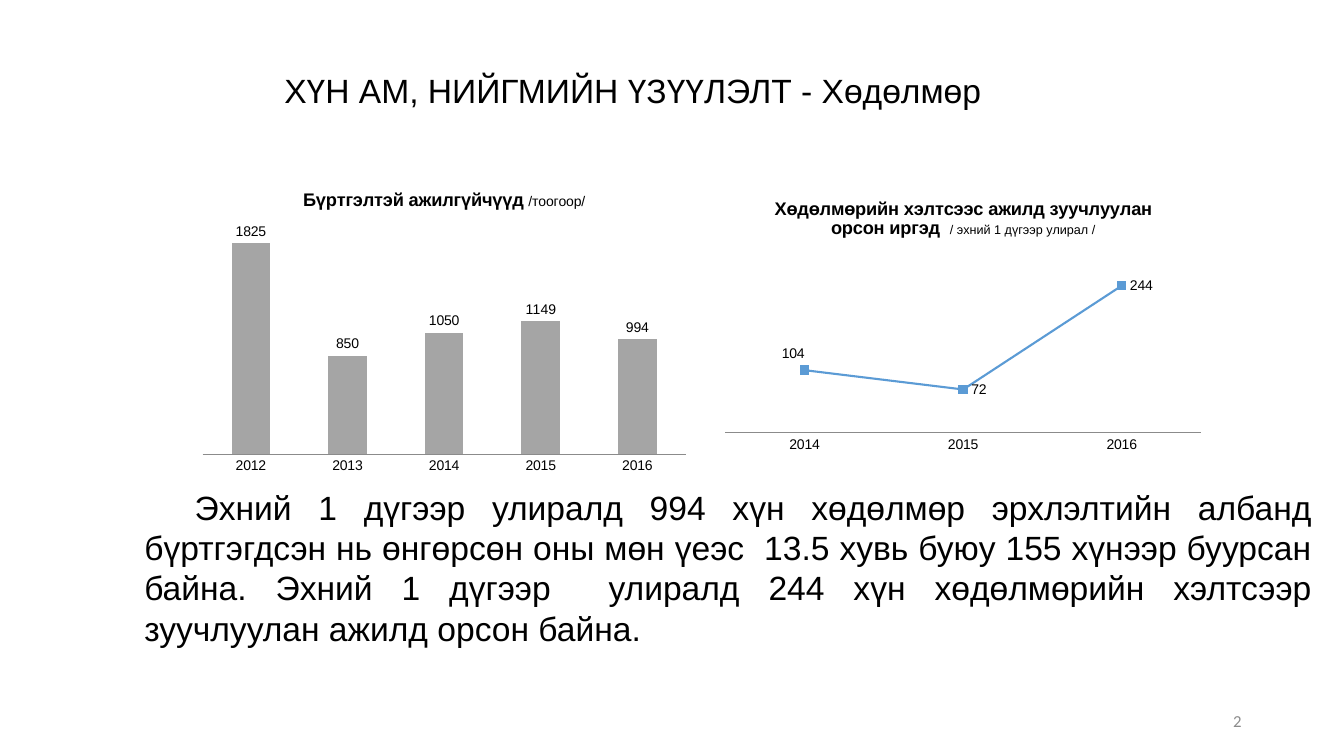
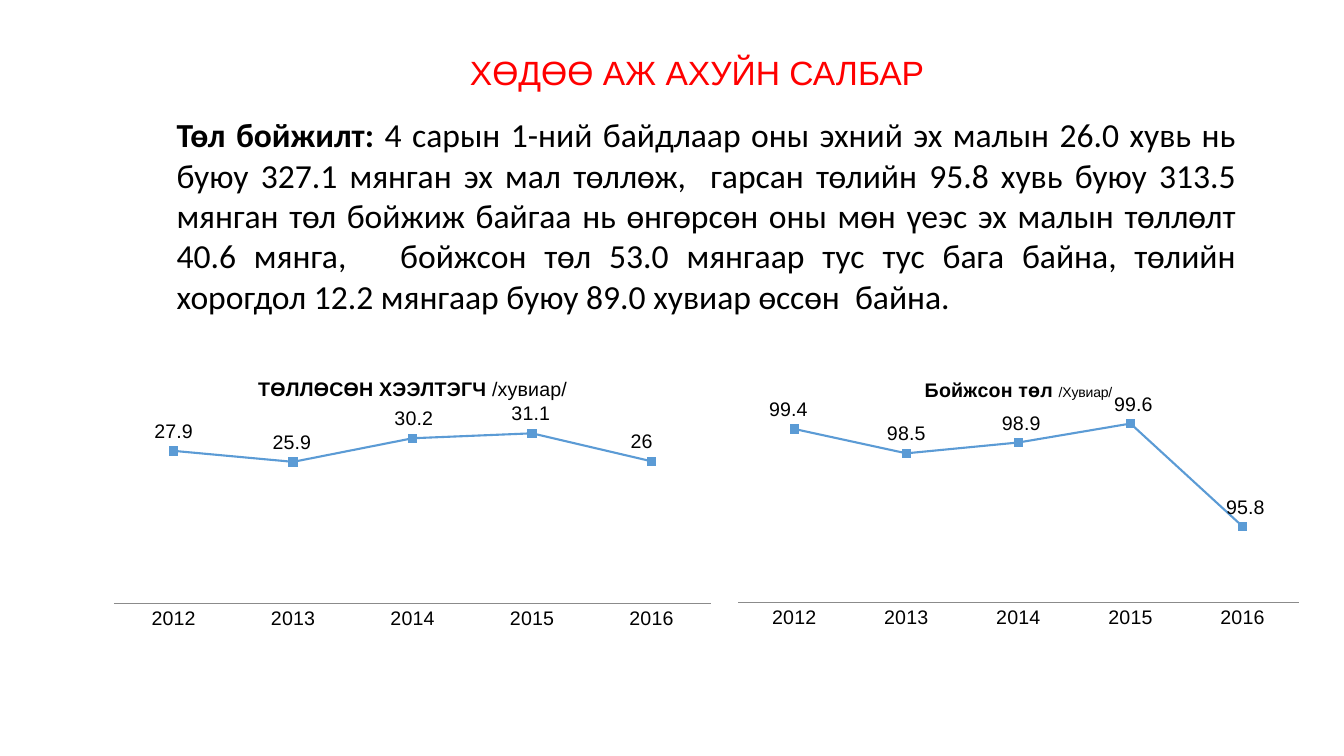
from lxml import etree
from pptx import Presentation
from pptx.chart.data import CategoryChartData
from pptx.dml.color import RGBColor
from pptx.enum.chart import XL_CHART_TYPE as ChartType, XL_LABEL_POSITION as LabelPos
from pptx.enum.chart import XL_MARKER_STYLE as Marker, XL_TICK_MARK as Tick
from pptx.enum.text import MSO_ANCHOR as Anchor, PP_ALIGN as Align
from pptx.oxml.ns import qn
from pptx.util import Pt

BLACK, RED, BLUE, BAR_GREY = "000000", "FF0000", "5B9BD5", "A5A5A5"
AXIS_GREY, NUMBER_GREY = "8B8B8B", "8C8C8C"
HEADING, BODY = "Arial", "Calibri"
YEARS = ["2012", "2013", "2014", "2015", "2016"]
ABOVE, RIGHT = LabelPos.ABOVE, LabelPos.RIGHT

# Boxes are (left, top, width, height) in points.
# "plot" is the plot area as fractions of the chart; "labels" pairs a
# position with a sideways nudge in points for each value.
SLIDES = [
    dict(
        title="ХҮН АМ, НИЙГМИЙН ҮЗҮҮЛЭЛТ - Хөдөлмөр",
        title_box=(196, 36, 708, 60), title_color=BLACK, title_align=Align.LEFT,
        body=[("Эхний 1 дүгээр улиралд 994 хүн хөдөлмөр эрхлэлтийн албанд "
               "бүртгэгдсэн нь өнгөрсөн оны мөн үеэс  13.5 хувь буюу 155 хүнээр "
               "буурсан байна. Эхний 1 дүгээр  улиралд 244 хүн хөдөлмөрийн "
               "хэлтсээр зуучлуулан ажилд орсон байна.", False)],
        body_box=(96, 344, 848, 122), body_font=HEADING, body_indent=36,
        number="2",
        charts=[
            dict(title="Бүртгэлтэй ажилгүйчүүд ", unit="/тоогоор/", title_sizes=(13, 10),
                 kind=ChartType.COLUMN_CLUSTERED, box=(137.5, 124.5, 359.5, 217.5),
                 plot=(0.02, 0.16, 0.96, 0.76), scale=(0, 2000), size=10,
                 years=YEARS, values=[1825, 850, 1050, 1149, 994]),
            dict(title="Хөдөлмөрийн хэлтсээс ажилд зуучлуулан орсон иргэд  ",
                 unit="/ эхний 1 дүгээр улирал /", title_sizes=(13, 9),
                 kind=ChartType.LINE_MARKERS, box=(511, 131, 354, 196),
                 plot=(0.02, 0.25, 0.96, 0.66), scale=(0, 300), size=10,
                 years=YEARS[2:], values=[104, 72, 244],
                 labels=[(ABOVE, -8), (RIGHT, 0), (RIGHT, 0)]),
        ]),
    dict(
        title="ХӨДӨӨ АЖ АХУЙН САЛБАР",
        title_box=(192, 23, 612, 60), title_color=RED, title_align=Align.CENTER,
        body=[("Төл бойжилт: ", True),
              ("4 сарын 1-ний байдлаар оны эхний эх малын 26.0 хувь нь буюу 327.1 "
               "мянган эх мал төллөж,  гарсан төлийн 95.8 хувь буюу 313.5 мянган төл "
               "бойжиж байгаа нь өнгөрсөн оны мөн үеэс эх малын төллөлт 40.6 мянга,   "
               "бойжсон төл 53.0 мянгаар тус тус бага байна, төлийн хорогдол 12.2 "
               "мянгаар буюу 89.0 хувиар өссөн  байна.", False)],
        body_box=(119, 78, 771, 152), body_font=BODY, body_indent=0,
        charts=[
            dict(title="ТӨЛЛӨСӨН ХЭЭЛТЭГЧ ", unit="/хувиар/", title_sizes=(14, 14),
                 kind=ChartType.LINE_MARKERS, box=(72.5, 259, 444.5, 196),
                 plot=(0.02, 0.18, 0.96, 0.7), scale=(0, 35), size=14,
                 years=YEARS, values=[27.9, 25.9, 30.2, 31.1, 26],
                 labels=[(ABOVE, dx) for dx in (0, -1, 1, -1, -7)]),
            dict(title="Бойжсон төл ", unit="/Хувиар/", title_sizes=(14, 10),
                 kind=ChartType.LINE_MARKERS, box=(519, 260, 417, 193.5),
                 plot=(0.02, 0.18, 0.96, 0.7), scale=(93, 100), size=14,
                 years=YEARS, values=[99.4, 98.5, 98.9, 99.6, 95.8],
                 labels=[(ABOVE, dx) for dx in (-4, 0, 2, 2, 2)]),
        ]),
]


def rgb(color):
    return RGBColor.from_string(color)


def style(font, size, name=HEADING, color=BLACK, bold=False):
    font.size, font.name, font.bold = Pt(size), name, bold
    font.color.rgb = rgb(color)


def add_text(slide, box, runs, size=24, name=HEADING, color=BLACK,
             align=Align.LEFT, anchor=Anchor.MIDDLE, indent=0, spacing=None):
    frame = slide.shapes.add_textbox(*map(Pt, box)).text_frame
    frame.word_wrap, frame.vertical_anchor = True, anchor
    paragraph = frame.paragraphs[0]
    paragraph.alignment, paragraph.line_spacing = align, spacing
    if indent:
        paragraph._p.get_or_add_pPr().set("indent", str(Pt(indent)))
    for text, bold in runs:
        run = paragraph.add_run()
        run.text = text
        style(run.font, size, name, color, bold)


def manual_layout(parent, index, **settings):
    """Place a chart part by hand, replacing any automatic layout."""
    for old in parent.findall(qn("c:layout")):
        parent.remove(old)
    layout = etree.Element(qn("c:layout"))
    manual = etree.SubElement(layout, qn("c:manualLayout"))
    for tag, value in settings.items():
        etree.SubElement(manual, qn("c:" + tag)).set("val", str(value))
    parent.insert(index, layout)


def add_labels(series, item):
    labels = series.data_labels
    labels.show_value = True
    style(labels.font, item["size"])
    if "labels" not in item:
        labels.position = LabelPos.OUTSIDE_END
        return
    labels.position = RIGHT
    for i, (position, nudge) in enumerate(item["labels"]):
        label = series.points[i].data_label
        style(label.font, item["size"])
        label.position = position
        if nudge:
            entry = next(e for e in series._element.iter(qn("c:dLbl"))
                         if e.find(qn("c:idx")).get("val") == str(i))
            manual_layout(entry, 1, x=round(nudge / item["box"][2], 3), y=0)


def add_indicator_chart(slide, item):
    data = CategoryChartData()
    data.categories = item["years"]
    data.add_series(item["title"] + item["unit"], item["values"])
    chart = slide.shapes.add_chart(item["kind"], *map(Pt, item["box"]), data).chart
    style(chart.font, item["size"])
    chart.has_legend = False

    # Title: bold name, then the unit in regular type
    chart.has_title = True
    heading = chart.chart_title.text_frame.paragraphs[0]
    for text, size, bold in zip((item["title"], item["unit"]),
                                item["title_sizes"], (True, False)):
        run = heading.add_run()
        run.text = text
        style(run.font, size, bold=bold)

    # Axes and plot area
    values, years = chart.value_axis, chart.category_axis
    values.minimum_scale, values.maximum_scale = item["scale"]
    values.has_major_gridlines = values.visible = False
    years.major_tick_mark = years.minor_tick_mark = Tick.NONE
    years.format.line.color.rgb = rgb(AXIS_GREY)
    years.format.line.width = Pt(0.75)
    style(years.tick_labels.font, item["size"])
    x, y, w, h = item["plot"]
    manual_layout(chart._chartSpace.chart.plotArea, 0, layoutTarget="inner",
                  xMode="edge", yMode="edge", x=x, y=y, w=w, h=h)

    # Series
    plot = chart.plots[0]
    plot.vary_by_categories = False
    series = plot.series[0]
    if item["kind"] == ChartType.COLUMN_CLUSTERED:
        plot.gap_width = 150
        series.format.fill.solid()
        series.format.fill.fore_color.rgb = rgb(BAR_GREY)
    else:
        series.smooth = False
        series.format.line.color.rgb = rgb(BLUE)
        series.format.line.width = Pt(1.5)
        marker = series.marker
        marker.style, marker.size = Marker.SQUARE, 6
        marker.format.fill.solid()
        marker.format.fill.fore_color.rgb = rgb(BLUE)
        marker.format.line.color.rgb = rgb(BLUE)
    add_labels(series, item)


def main():
    deck = Presentation()
    deck.slide_width, deck.slide_height = Pt(960), Pt(540)
    for page in SLIDES:
        slide = deck.slides.add_slide(deck.slide_layouts[6])
        add_text(slide, page["title_box"], [(page["title"], False)],
                 color=page["title_color"], align=page["title_align"], spacing=0.9)
        add_text(slide, page["body_box"], page["body"], name=page["body_font"],
                 align=Align.JUSTIFY, anchor=Anchor.TOP, indent=page["body_indent"])
        if "number" in page:
            add_text(slide, (678, 500, 216, 29), [(page["number"], False)], size=12,
                     name=BODY, color=NUMBER_GREY, align=Align.RIGHT)
        for item in page["charts"]:
            add_indicator_chart(slide, item)
    deck.save("out.pptx")


if __name__ == "__main__":
    main()
